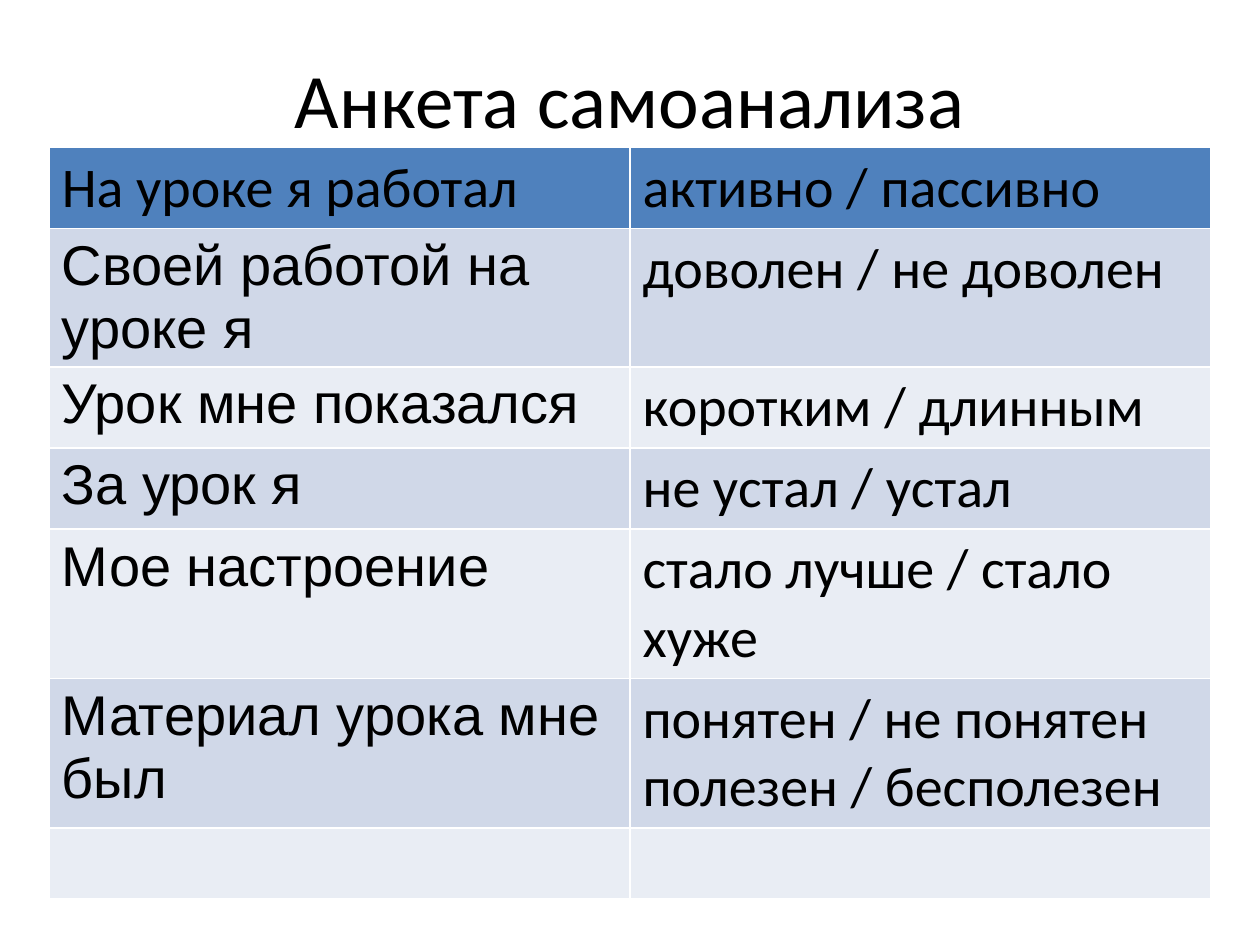
from dataclasses import dataclass

from pptx import Presentation
from pptx.dml.color import RGBColor
from pptx.enum.text import MSO_ANCHOR, PP_ALIGN
from pptx.util import Inches, Pt

CENTER, LEFT = PP_ALIGN.CENTER, PP_ALIGN.LEFT
MIDDLE = MSO_ANCHOR.MIDDLE
TITLE_ONLY = 5


@dataclass(frozen=True)
class Theme:
    ink: str = "000000"
    header: str = "4F81BD"
    bands: tuple = ("E9EDF4", "D0D8E8")
    main_font: str = "Calibri"
    question_font: str = "Arial"
    title_size: int = 44
    table_size: int = 32


THEME = Theme()
ROW_HEIGHT = 0.56
TALL_ROW_HEIGHT = 0.96

SURVEY = [
    ("На уроке я работал", "активно / пассивно"),
    ("Своей работой на уроке я", "доволен / не доволен"),
    ("Урок мне показался", "коротким / длинным"),
    ("За урок я", "не устал / устал"),
    ("Мое настроение", "стало лучше / стало хуже"),
    ("Материал урока мне был", "понятен / не понятен\nполезен / бесполезен"),
    ("", ""),
]


def write_text(frame, text, font=THEME.main_font, size=THEME.table_size, align=LEFT):
    for index, line in enumerate(text.split("\n")):
        para = frame.add_paragraph() if index else frame.paragraphs[0]
        para.alignment = align
        span = para.add_run()
        span.text = line
        span.font.name = font
        span.font.size = Pt(size)
        span.font.bold = False
        span.font.color.rgb = RGBColor.from_string(THEME.ink)


def add_title(page, box, text):
    title = page.shapes.title
    title.left, title.top, title.width, title.height = map(Inches, box)
    title.text_frame.vertical_anchor = MIDDLE
    write_text(title.text_frame, text, size=THEME.title_size, align=CENTER)


def add_survey_table(page, box, rows):
    """The table style supplies the white grid lines; rows grow with their text."""
    table = page.shapes.add_table(len(rows), len(rows[0]), *map(Inches, box)).table
    for row_index, texts in enumerate(rows):
        has_two_answers = "\n" in texts[-1]
        table.rows[row_index].height = Inches(
            TALL_ROW_HEIGHT if has_two_answers else ROW_HEIGHT)
        fill = THEME.bands[row_index % 2] if row_index else THEME.header
        for column_index, text in enumerate(texts):
            cell = table.cell(row_index, column_index)
            cell.fill.solid()
            cell.fill.fore_color.rgb = RGBColor.from_string(fill)
            is_question = row_index > 0 and column_index == 0
            if text:
                write_text(cell.text_frame, text,
                           font=THEME.question_font if is_question else THEME.main_font)


def main():
    deck = Presentation()
    deck.slide_width, deck.slide_height = Inches(10), Inches(7.5)
    page = deck.slides.add_slide(deck.slide_layouts[TITLE_ONLY])
    add_title(page, (0.5, 0, 9, 1.55), "Анкета самоанализа")
    table_height = ROW_HEIGHT * (len(SURVEY) - 1) + TALL_ROW_HEIGHT
    add_survey_table(page, (0.39, 1.17, 9.22, table_height), SURVEY)
    deck.save("out.pptx")


if __name__ == "__main__":
    main()
